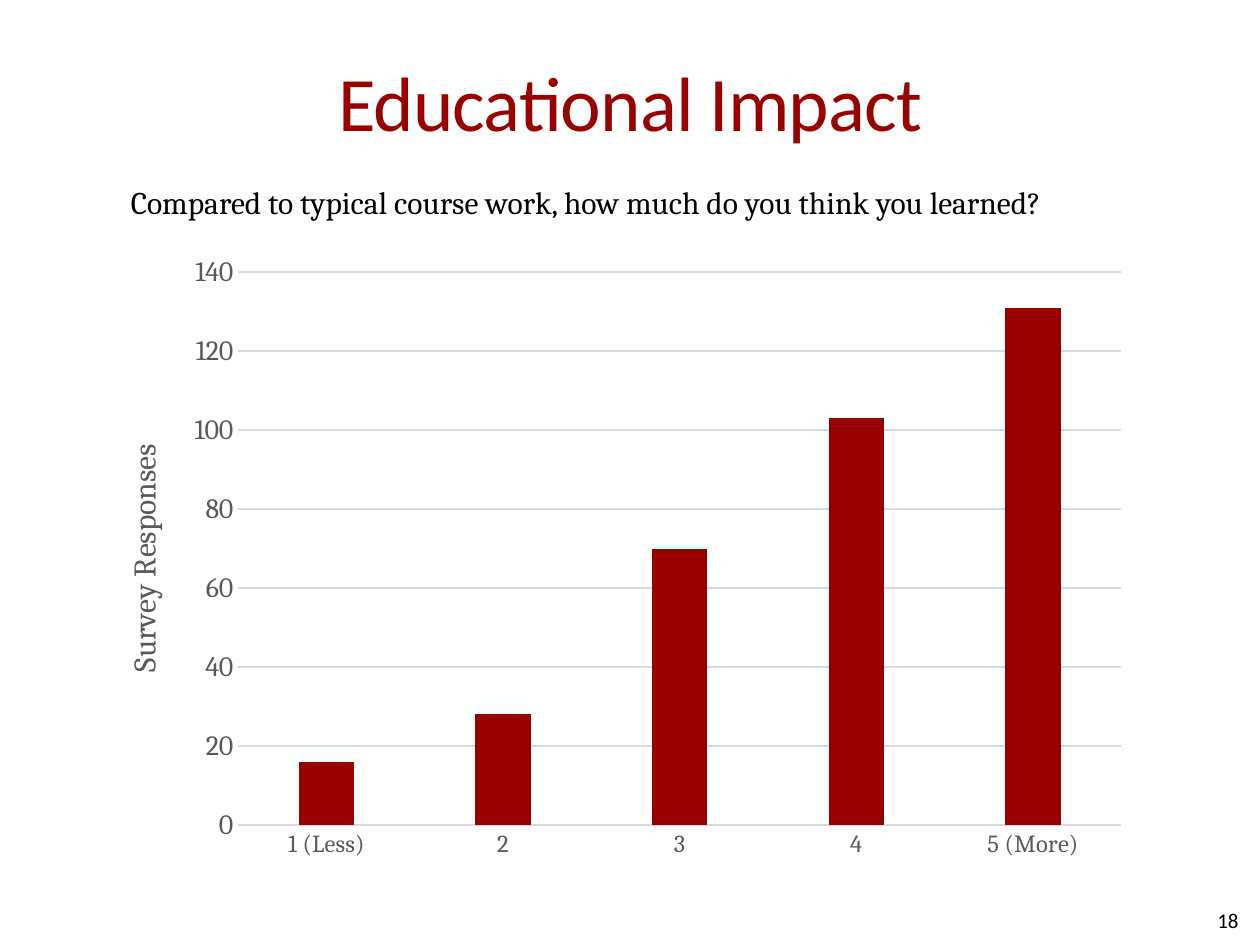
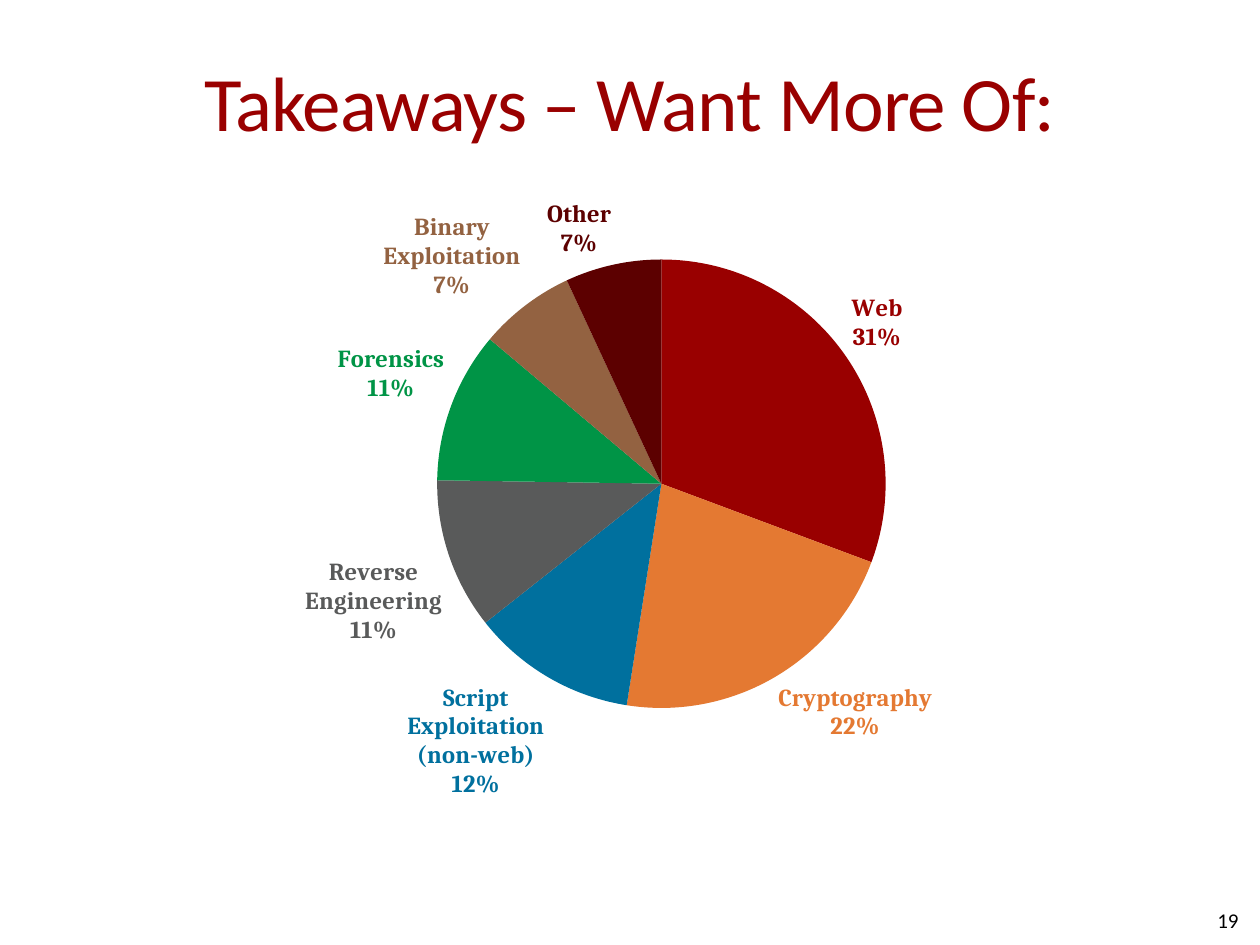
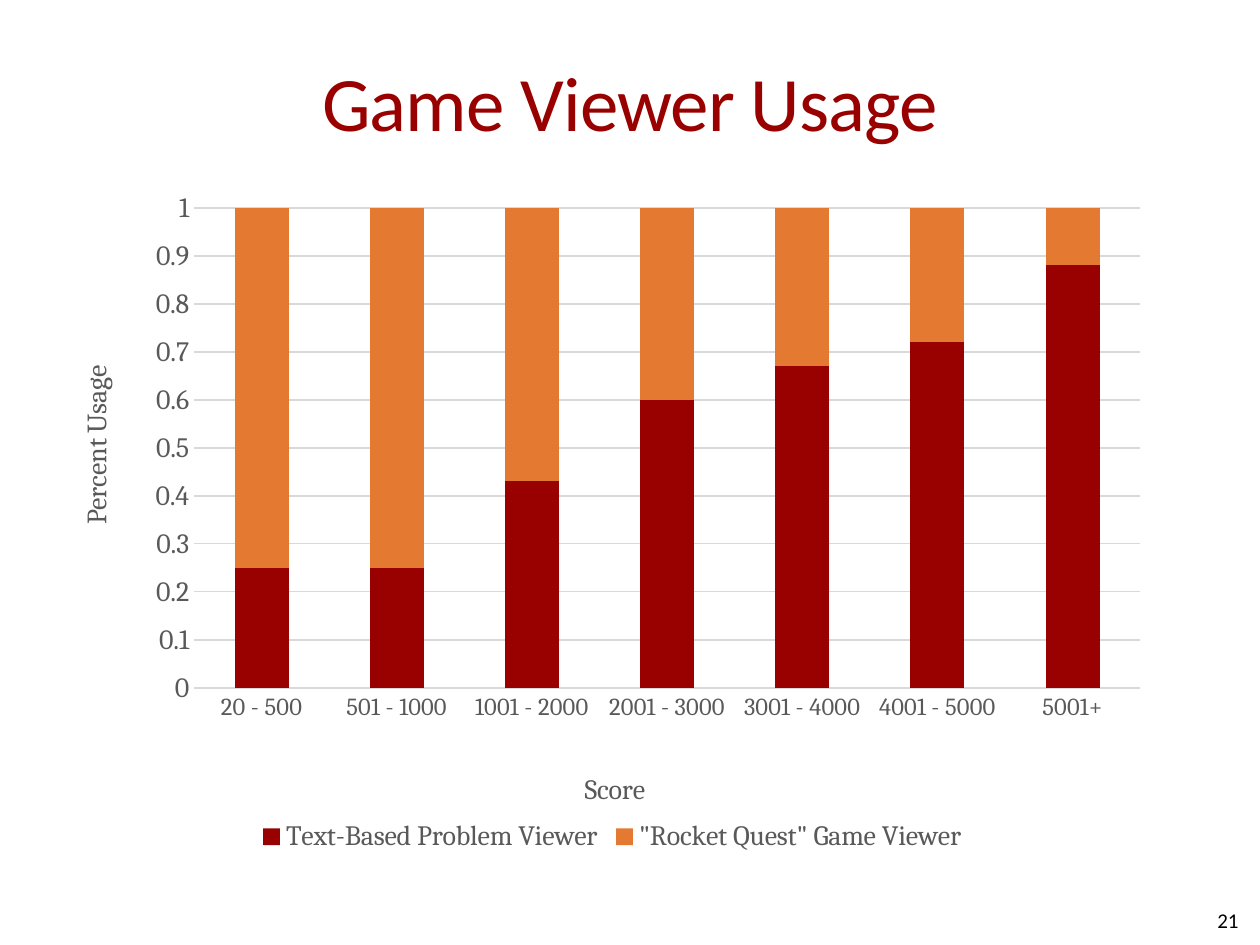
"""Build three survey result slides, each with one chart."""
import pptx
import pptx.chart.data
import pptx.dml.color
import pptx.enum.chart
import pptx.enum.text
import pptx.util
from lxml import etree
from pptx.oxml.ns import qn

RED, ORANGE, GRAY, GRID, BLACK = "990000", "E47932", "595959", "D9D9D9", "000000"
PIE_COLORS = [RED, ORANGE, "00709E", "595A5A", "009446", "936241", "5C0000"]
Inches, Pt = pptx.util.Inches, pptx.util.Pt
ALIGN = pptx.enum.text.PP_ALIGN
ANCHOR = pptx.enum.text.MSO_ANCHOR
TYPE = pptx.enum.chart.XL_CHART_TYPE


def set_font(font, size, color, name="Cambria", bold=False):
    """Set size, colour, face and weight of a font."""
    font.size, font.name, font.bold = Pt(size), name, bold
    font.color.rgb = pptx.dml.color.RGBColor.from_string(color)


def set_layout(el, index, frame, at):
    """Pin a chart part to a place given in slide inches."""
    for old in el.findall(qn("c:layout")):
        el.remove(old)
    layout = etree.Element(qn("c:layout"))
    el.insert(index, layout)
    manual = etree.SubElement(layout, qn("c:manualLayout"))
    left, top, width, height = frame
    values = [("xMode", "edge"), ("yMode", "edge")]
    if len(at) == 4:
        values.insert(0, ("layoutTarget", "inner"))
    fractions = [(at[0] - left) / width, (at[1] - top) / height]
    fractions += [v / total for v, total in zip(at[2:], (width, height))]
    values += [(k, f"{v:.4f}") for k, v in zip("xywh", fractions)]
    for key, value in values:
        etree.SubElement(manual, qn(f"c:{key}")).set("val", value)


SLIDES = [
    dict(title="Educational Impact", number="18", type=TYPE.COLUMN_CLUSTERED,
         frame=(0.76, 1.93, 8.31, 4.98), plot=(1.89, 2.16, 7.01, 4.39),
         cats=["1 (Less)", "2", "3", "4", "5 (More)"],
         series=[("Series 1", [16, 28, 70, 103, 131])], gap=219, overlap=-27,
         val_title=("Survey Responses", 18, (0.93, 3.48))),
    dict(title="Takeaways – Want More Of:", number="19", type=TYPE.PIE,
         frame=(1.45, 1.42, 7.09, 5.16), plot=(3.47, 2.06, 3.56, 3.56),
         cats=["Web", "Cryptography", "Script Exploitation (non-web)",
               "Reverse Engineering", "Forensics", "Binary Exploitation", "Other"],
         series=[("Series 1", [31, 22, 12, 11, 11, 7, 7])]),
    dict(title="Game Viewer Usage", number="21", type=TYPE.COLUMN_STACKED,
         frame=(0.5, 1.42, 8.72, 5.39), plot=(1.54, 1.65, 7.51, 3.81),
         cats=["20 - 500", "501 - 1000", "1001 - 2000", "2001 - 3000",
               "3001 - 4000", "4001 - 5000", "5001+"],
         series=[("Text-Based Problem Viewer", [0.25, 0.25, 0.43, 0.6, 0.67, 0.72, 0.88]),
                 ('"Rocket Quest" Game Viewer', [0.75, 0.75, 0.57, 0.4, 0.33, 0.28, 0.12])],
         gap=150, overlap=100, max=1, legend=True,
         val_title=("Percent Usage", 16, (0.58, 2.86)),
         cat_title=("Score", 16, (4.6, 6.08))),
]

prs = pptx.Presentation()
prs.slide_width, prs.slide_height = Inches(10), Inches(7.5)

for d in SLIDES:
    s = prs.slides.add_slide(prs.slide_layouts[6])
    for text, at, size, color, align in (
        (d["title"], (0.5, 0.17, 9, 1.25), 44, RED, ALIGN.CENTER),
        (d["number"], (7.5, 7.1, 2.33, 0.4), 12, BLACK, ALIGN.RIGHT),
    ):
        tf = s.shapes.add_textbox(*map(Inches, at)).text_frame
        tf.word_wrap, tf.vertical_anchor = True, ANCHOR.MIDDLE
        tf.margin_left = tf.margin_right = tf.margin_top = tf.margin_bottom = 0
        p = tf.paragraphs[0]
        p.text, p.alignment = text, align
        set_font(p.font, size, color, "Calibri")
        if color == RED:
            p.runs[0].font._element.set("spc", "-50")

    data = pptx.chart.data.CategoryChartData()
    data.categories = d["cats"]
    for name, values in d["series"]:
        data.add_series(name, values)
    chart = s.shapes.add_chart(d["type"], *map(Inches, d["frame"]), data).chart
    set_font(chart.font, 10, BLACK)
    chart.has_title = False
    chart.has_legend = "legend" in d
    if chart.has_legend:
        chart.legend.position = pptx.enum.chart.XL_LEGEND_POSITION.BOTTOM
        chart.legend.include_in_layout = False
        set_font(chart.legend.font, 16, GRAY)
    set_layout(chart._chartSpace.find(".//" + qn("c:plotArea")), 0, d["frame"], d["plot"])
    plot = chart.plots[0]

    if d["type"] == TYPE.PIE:
        for i, color in enumerate(PIE_COLORS):
            point = plot.series[0].points[i]
            point.format.fill.solid()
            point.format.fill.fore_color.rgb = pptx.dml.color.RGBColor.from_string(color)
            set_font(point.data_label.font, 14, color, bold=True)
            point.data_label.position = pptx.enum.chart.XL_LABEL_POSITION.OUTSIDE_END
        for label in chart._chartSpace.iter(qn("c:dLbl")):
            for key, value in (("showVal", "0"), ("showCatName", "1"), ("showPercent", "1")):
                label.find(qn(f"c:{key}")).set("val", value)
            etree.SubElement(label, qn("c:separator")).text = "\n"
        continue

    plot.vary_by_categories = False
    plot.gap_width, plot.overlap = d["gap"], d["overlap"]
    for series, color in zip(plot.series, (RED, ORANGE)):
        series.format.fill.solid()
        series.format.fill.fore_color.rgb = pptx.dml.color.RGBColor.from_string(color)
    cat, val = chart.category_axis, chart.value_axis
    for axis, size, key in ((cat, 14, "cat_title"), (val, 16, "val_title")):
        axis.major_tick_mark = axis.minor_tick_mark = pptx.enum.chart.XL_TICK_MARK.NONE
        set_font(axis.tick_labels.font, size, GRAY)
        axis.has_title = key in d
        if axis.has_title:
            text, title_size, at = d[key]
            tf = axis.axis_title.text_frame
            tf.text = text
            set_font(tf.paragraphs[0].font, title_size, GRAY)
            if axis is val:
                tf._txBody.bodyPr.set("rot", "-5400000")
                tf._txBody.bodyPr.set("vert", "horz")
            set_layout(axis.axis_title._element, 1, d["frame"], at)
    val.format.line.fill.background()
    val.has_major_gridlines = True
    for line in (cat.format.line, val.major_gridlines.format.line):
        line.width = Pt(0.75)
        line.color.rgb = pptx.dml.color.RGBColor.from_string(GRID)
    if "max" in d:
        val.maximum_scale = d["max"]

tf = prs.slides[0].shapes.add_textbox(*map(Inches, (0.94, 1.4, 8.13, 0.4))).text_frame
tf.word_wrap = False
p = tf.paragraphs[0]
p.text = "Compared to typical course work, how much do you think you learned?"
set_font(p.font, 18, BLACK)

prs.save("out.pptx")
